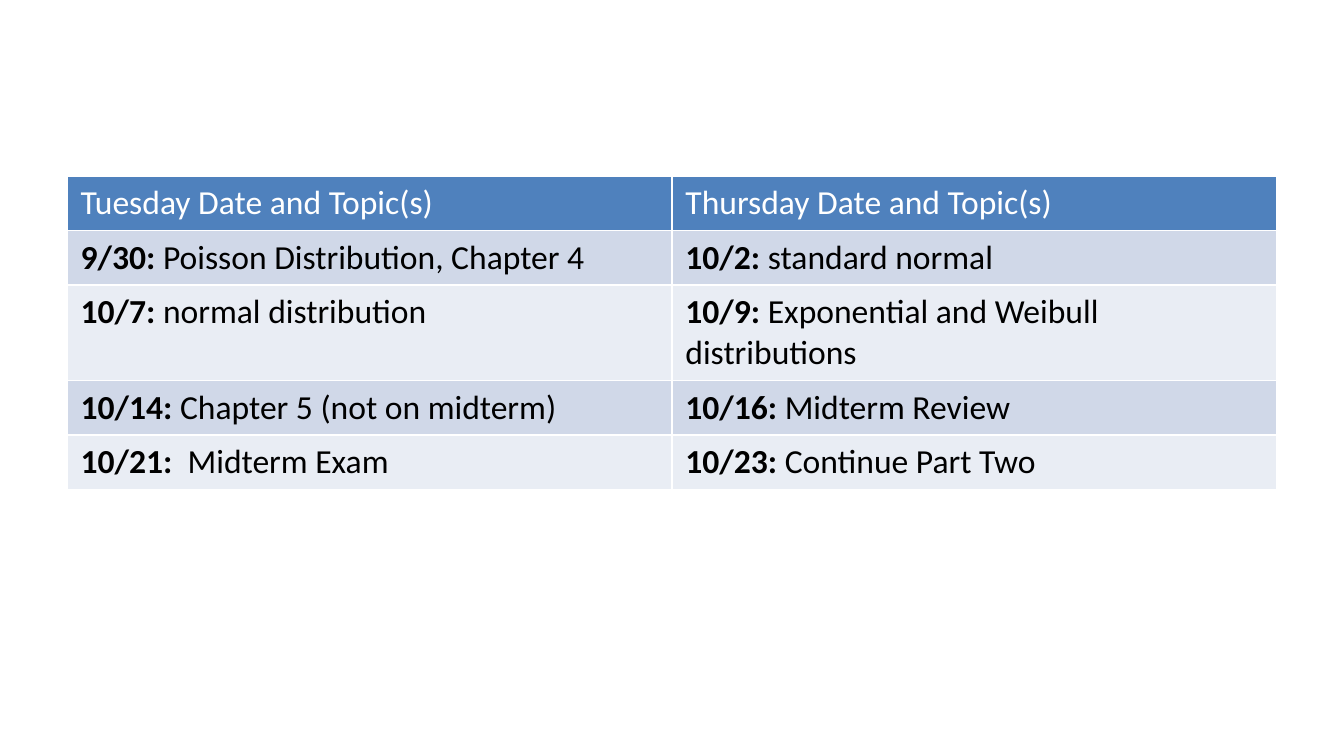
from pptx import Presentation
from pptx.dml.color import RGBColor
from pptx.oxml.ns import qn
from pptx.util import Inches, Pt
from lxml import etree

BLANK = 6
WIDE = 10
HIGH = WIDE * 9 / 16
COLORS = {"head": "4F81BD", "odd": "D0D8E8", "even": "E9EDF4",
          "white": "FFFFFF", "black": "000000"}

# Each cell holds a bold date and its topic
HEADS = ["Tuesday Date and Topic(s)", "Thursday Date and Topic(s)"]
DATES = [
    [("9/30:", " Poisson Distribution, Chapter 4"), ("10/2:", " standard normal")],
    [("10/7:", " normal distribution"),
     ("10/9:", " Exponential and Weibull distributions")],
    [("10/14:", " Chapter 5 (not on midterm)"), ("10/16:", " Midterm Review")],
    [("10/21: ", " Midterm Exam"), ("10/23:", " Continue Part Two")],
]


class Deck:
    def __init__(self, font, size):
        self.prs = Presentation()
        self.prs.slide_width, self.prs.slide_height = Inches(WIDE), Inches(HIGH)
        self.slide = self.prs.slides.add_slide(self.prs.slide_layouts[BLANK])
        self.font, self.size = font, size

    def color(self, name):
        return RGBColor.from_string(COLORS[name])

    def border(self, cell):
        props = cell._tc.get_or_add_tcPr()
        for side in "LRTB":
            line = etree.SubElement(props, qn(f"a:ln{side}"), w=str(Pt(1)))
            fill = etree.SubElement(line, qn("a:solidFill"))
            etree.SubElement(fill, qn("a:srgbClr"), val=COLORS["white"])

    def cell(self, cell, runs, fill, ink):
        self.border(cell)
        cell.fill.solid()
        cell.fill.fore_color.rgb = self.color(fill)
        para = cell.text_frame.paragraphs[0]
        for text, bold in runs:
            run = para.add_run()
            run.text, run.font.bold = text, bold
            # Table styles take precedence unless the run states its look
            run.font.name, run.font.size = self.font, Pt(self.size)
            run.font.color.rgb = self.color(ink)

    def table(self, left, top, width, heads, rows, heights):
        table = self.slide.shapes.add_table(
            len(rows) + 1, len(heads), Inches(left * WIDE), Inches(top * HIGH),
            Inches(width * WIDE), Inches(sum(heights))).table
        for row, height in zip(table.rows, heights):
            row.height = Inches(height)
        # Header row
        for col, text in enumerate(heads):
            self.cell(table.cell(0, col), [(text, False)], "head", "white")
        # Banded rows
        for num, row in enumerate(rows, 1):
            fill = "odd" if num % 2 else "even"
            for col, (date, topic) in enumerate(row):
                self.cell(table.cell(num, col), [(date, True), (topic, False)],
                          fill, "black")


def main():
    deck = Deck("Calibri", 18)
    deck.table(0.05, 1.31 / HIGH, 0.9, HEADS, DATES, [0.4, 0.4, 0.7, 0.4, 0.4])
    deck.prs.save("out.pptx")


if __name__ == "__main__":
    main()
